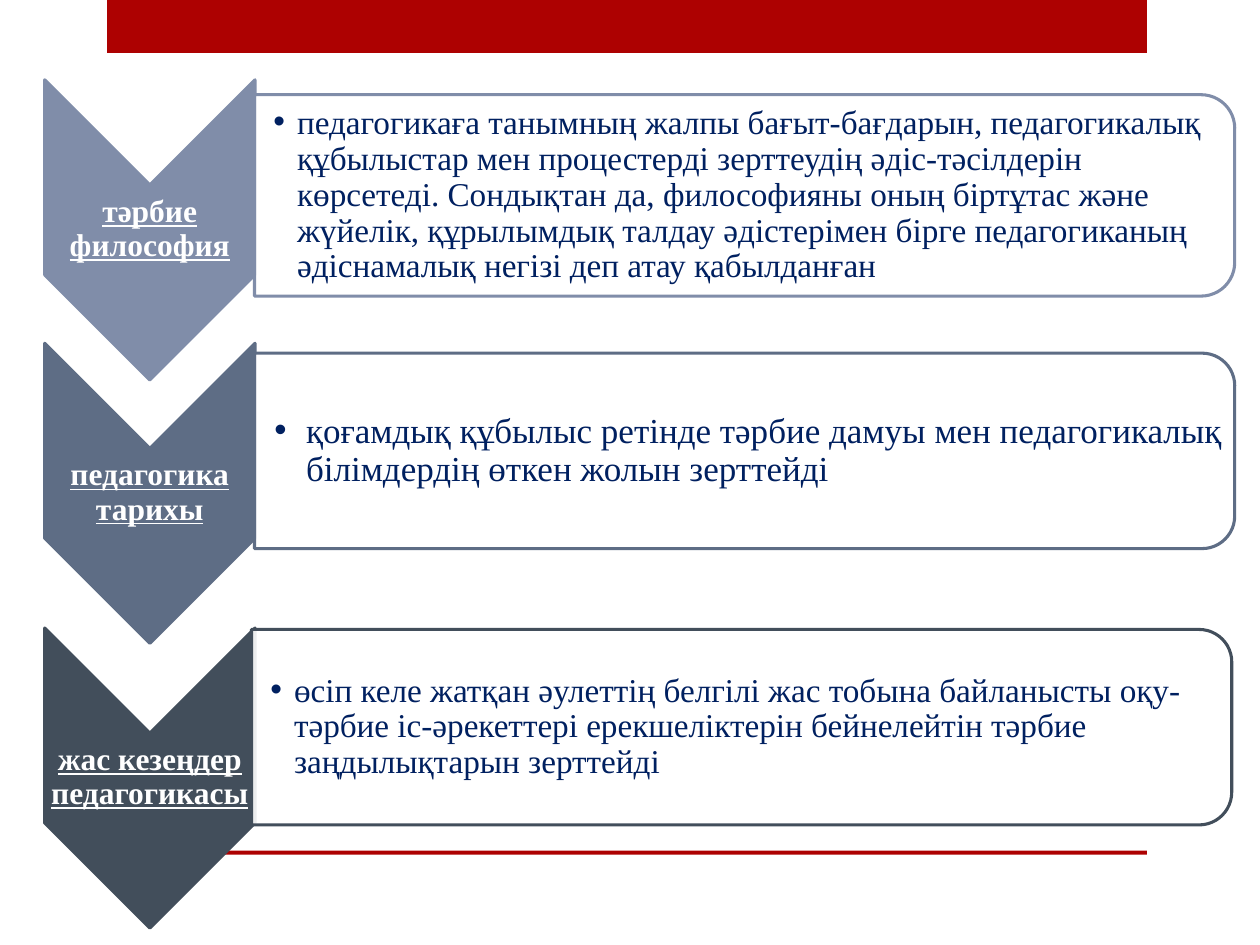
from lxml import etree
from pptx import Presentation
from pptx.dml.color import RGBColor
from pptx.enum.shapes import MSO_SHAPE
from pptx.enum.text import MSO_ANCHOR, PP_ALIGN
from pptx.oxml.ns import qn
from pptx.util import Cm, Pt

RECTANGLE = MSO_SHAPE.RECTANGLE
CHEVRON = MSO_SHAPE.CHEVRON
ROUNDED_TOP = MSO_SHAPE.ROUND_2_SAME_RECTANGLE
MIDDLE = MSO_ANCHOR.MIDDLE
CENTER = PP_ALIGN.CENTER
LEFT = PP_ALIGN.LEFT

FONT = "Times New Roman"
RED, WHITE, NAVY = "AD0101", "FFFFFF", "002060"
CHEVRON_LEFT, CHEVRON_WIDTH, CHEVRON_HEIGHT = 0.9, 4.24, 6.05
LABEL_DROP, LABEL_HEIGHT = 2.1, 1.83
PANEL_WIDTH, PANEL_MARGIN = 19.76, 0.2
THIN_INSET = 0.03

BRANCHES = [
    dict(label="тəрбие философия", color="808DA9", chevron_top=1.61,
         panel_left=5.13, panel_top=1.91, panel_height=4.06,
         size=19, indent=0.48,
         detail="педагогикаға танымның жалпы бағыт-бағдарын, педагогикалық "
                "құбылыстар мен процестерді зерттеудің əдіс-тəсілдерін көрсетеді. "
                "Сондықтан да, философияны оның біртұтас жəне жүйелік, құрылымдық "
                "талдау əдістерімен бірге педагогиканың əдіснамалық негізі деп "
                "атау қабылданған"),
    dict(label="педагогика тарихы", color="5E6D85", chevron_top=6.92,
         panel_left=5.13, panel_top=7.12, panel_height=3.94,
         size=20, indent=0.64,
         detail="қоғамдық құбылыс ретінде тəрбие дамуы мен педагогикалық "
                "білімдердің өткен жолын зерттейді"),
    dict(label="жас кезеңдер педагогикасы", color="424E5B", chevron_top=12.66,
         panel_left=5.07, panel_top=12.69, panel_height=3.94,
         size=19, indent=0.48,
         detail="өсіп келе жатқан əулеттің белгілі жас тобына байланысты "
                "оқу-тəрбие іс-əрекеттері ерекшеліктерін бейнелейтін тəрбие "
                "заңдылықтарын зерттейді"),
]


def rgb(color):
    return RGBColor.from_string(color)


def add_filled(slide, preset, left, top, width, height, fill, outline=None):
    shape = slide.shapes.add_shape(preset, Cm(left), Cm(top), Cm(width), Cm(height))
    shape.shadow.inherit = False
    shape.fill.solid()
    shape.fill.fore_color.rgb = rgb(fill)
    if outline:
        shape.line.color.rgb = rgb(outline)
        shape.line.width = Pt(1.75)
    else:
        shape.line.fill.background()
    return shape


def add_quarter_turned(slide, preset, left, top, width, height, fill, outline):
    shift = (width - height) / 2
    shape = add_filled(slide, preset, left + shift, top - shift,
                       height, width, fill, outline)
    shape.rotation = 90
    return shape


def set_opacity(shape, percent):
    color = shape.fill._xPr.find(qn("a:solidFill"))[0]
    etree.SubElement(color, qn("a:alpha"), val=str(percent * 1000))


def add_text(slide, left, top, width, height, text, size, color,
             align, left_inset=THIN_INSET, strong=False):
    box = slide.shapes.add_textbox(Cm(left), Cm(top), Cm(width), Cm(height))
    frame = box.text_frame
    frame.word_wrap = True
    frame.vertical_anchor = MIDDLE
    frame.margin_left = Cm(left_inset)
    frame.margin_top = frame.margin_right = frame.margin_bottom = Cm(THIN_INSET)
    paragraph = frame.paragraphs[0]
    paragraph.alignment = align
    paragraph.line_spacing = 0.9
    run = paragraph.add_run()
    run.text = text
    run.font.name = FONT
    run.font.size = Pt(size)
    run.font.color.rgb = rgb(color)
    if strong:
        run.font.bold = run.font.underline = True
    return paragraph


def add_bullet(paragraph, indent):
    paragraph.level = 1
    properties = paragraph._p.get_or_add_pPr()
    properties.set("marL", str(Cm(indent)))
    properties.set("indent", str(-Cm(indent)))
    etree.SubElement(properties, qn("a:buFont"), typeface="Arial")
    etree.SubElement(properties, qn("a:buChar"), char="•")


def add_branch(slide, label, color, chevron_top, panel_left, panel_top,
               panel_height, size, indent, detail):
    add_quarter_turned(slide, CHEVRON, CHEVRON_LEFT, chevron_top,
                       CHEVRON_WIDTH, CHEVRON_HEIGHT, color, color)
    add_text(slide, CHEVRON_LEFT, chevron_top + LABEL_DROP, CHEVRON_WIDTH,
             LABEL_HEIGHT, label, 18, WHITE, CENTER, strong=True)
    panel = add_quarter_turned(slide, ROUNDED_TOP, panel_left, panel_top,
                               PANEL_WIDTH, panel_height, WHITE, color)
    set_opacity(panel, 90)
    explanation = add_text(slide, panel_left, panel_top + PANEL_MARGIN,
                           PANEL_WIDTH - PANEL_MARGIN,
                           panel_height - 2 * PANEL_MARGIN,
                           detail, size, NAVY, LEFT, left_inset=size / 50)
    add_bullet(explanation, indent)


def main():
    deck = Presentation()
    deck.slide_width, deck.slide_height = Cm(25.4), Cm(19.05)
    slide = deck.slides.add_slide(deck.slide_layouts[6])
    for top, height in ((0, 1.07), (17.15, 0.08)):
        add_filled(slide, RECTANGLE, 2.16, top, 20.96, height, RED)
    for branch in BRANCHES:
        add_branch(slide, **branch)
    deck.save("out.pptx")


if __name__ == "__main__":
    main()
